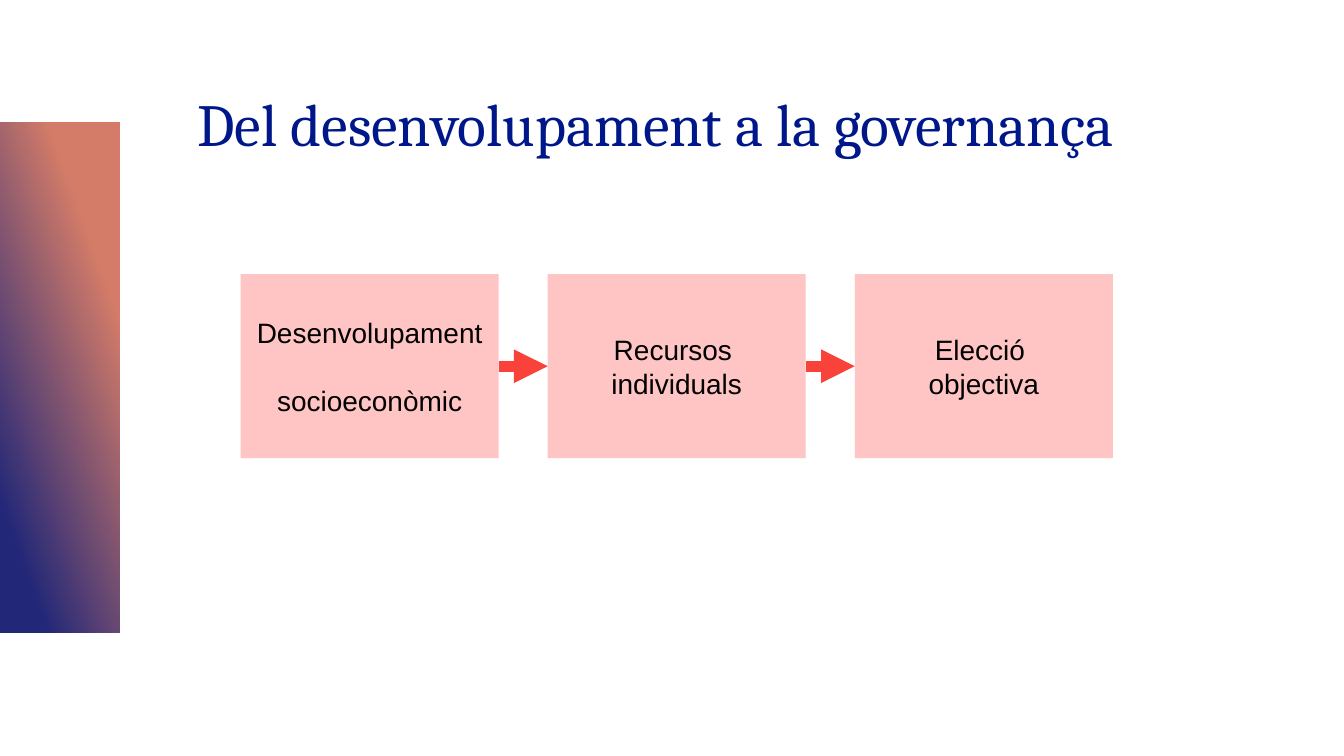
from lxml import etree
from pptx import Presentation
from pptx.dml.color import RGBColor
from pptx.enum import shapes, text
from pptx.oxml import ns
from pptx.util import Inches, Pt

COLORS = {
    "title": "001789",
    "box": "FFC5C5",
    "label": "000000",
    "arrow": "F9423A",
    "band_low": "222778",
    "band_high": "D47C68",
}
# A vertical tab breaks the line within a paragraph
STEPS = [
    ["Desenvolupament \vsocioeconòmic"],
    ["Recursos ", "individuals"],
    ["Elecció ", "objectiva"],
]


def color(name):
    return RGBColor.from_string(COLORS[name])


def style(paragraph, font_name, size, color_name, align):
    paragraph.alignment = align
    paragraph.font.name = font_name
    paragraph.font.size = Pt(size)
    paragraph.font.color.rgb = color(color_name)


def add_rect(slide, left, top, width, height):
    rect = slide.shapes.add_shape(
        shapes.MSO_SHAPE.RECTANGLE,
        Inches(left), Inches(top), Inches(width), Inches(height))
    rect.shadow.inherit = False
    rect.line.fill.background()
    return rect


def add_band(slide, left, top, width, height):
    fill = add_rect(slide, left, top, width, height).fill
    fill.gradient()
    fill.gradient_angle = 20
    stops = [("band_low", 0.15), ("band_high", 0.77)]
    for stop, (name, position) in zip(fill.gradient_stops, stops):
        stop.color.rgb = color(name)
        stop.position = position


def set_title(slide, left, top, width, height):
    title = slide.shapes.title
    title.left, title.top = Inches(left), Inches(top)
    title.width, title.height = Inches(width), Inches(height)
    frame = title.text_frame
    frame.text = "Del desenvolupament a la governança"
    frame.vertical_anchor = text.MSO_ANCHOR.BOTTOM
    frame.paragraphs[0].line_spacing = 0.9
    style(frame.paragraphs[0], "Cambria", 32, "title", text.PP_ALIGN.LEFT)


def add_step(slide, lines, left, top, width, height):
    box = add_rect(slide, left, top, width, height)
    box.fill.solid()
    box.fill.fore_color.rgb = color("box")
    frame = box.text_frame
    frame.word_wrap = True
    frame.vertical_anchor = text.MSO_ANCHOR.MIDDLE
    frame.text = "\n".join(lines)
    for paragraph in frame.paragraphs:
        style(paragraph, "Arial", 15, "label", text.PP_ALIGN.CENTER)


def add_arrow(slide, start, end, y):
    arrow = slide.shapes.add_connector(
        shapes.MSO_CONNECTOR.STRAIGHT,
        Inches(start), Inches(y), Inches(end), Inches(y))
    arrow.line.color.rgb = color("arrow")
    arrow.line.width = Pt(6)
    etree.SubElement(arrow.line._get_or_add_ln(), ns.qn("a:tailEnd"),
                     type="triangle")
    etree.SubElement(arrow._element.spPr, ns.qn("a:effectLst"))


def add_flow(slide, left, top, width, height):
    box_width = 1.92
    pitch = (width - box_width) / (len(STEPS) - 1)
    for i, lines in enumerate(STEPS):
        x = left + i * pitch
        add_step(slide, lines, x, top, box_width, height)
        if i:
            add_arrow(slide, x - pitch + box_width, x, top + height / 2)


def main():
    deck = Presentation()
    # Widescreen, 16:9
    deck.slide_width = Inches(10)
    deck.slide_height = deck.slide_width * 9 // 16
    slide = deck.slides.add_slide(deck.slide_layouts[5])
    # Gradient band on the left edge
    add_band(slide, 0, 0.91, 0.89, 3.8)
    # Title
    set_title(slide, 1.37, 0.28, 8.32, 0.96)
    # Chain of three steps
    add_flow(slide, 1.79, 2.04, 6.49, 1.37)
    deck.save("out.pptx")


if __name__ == "__main__":
    main()
